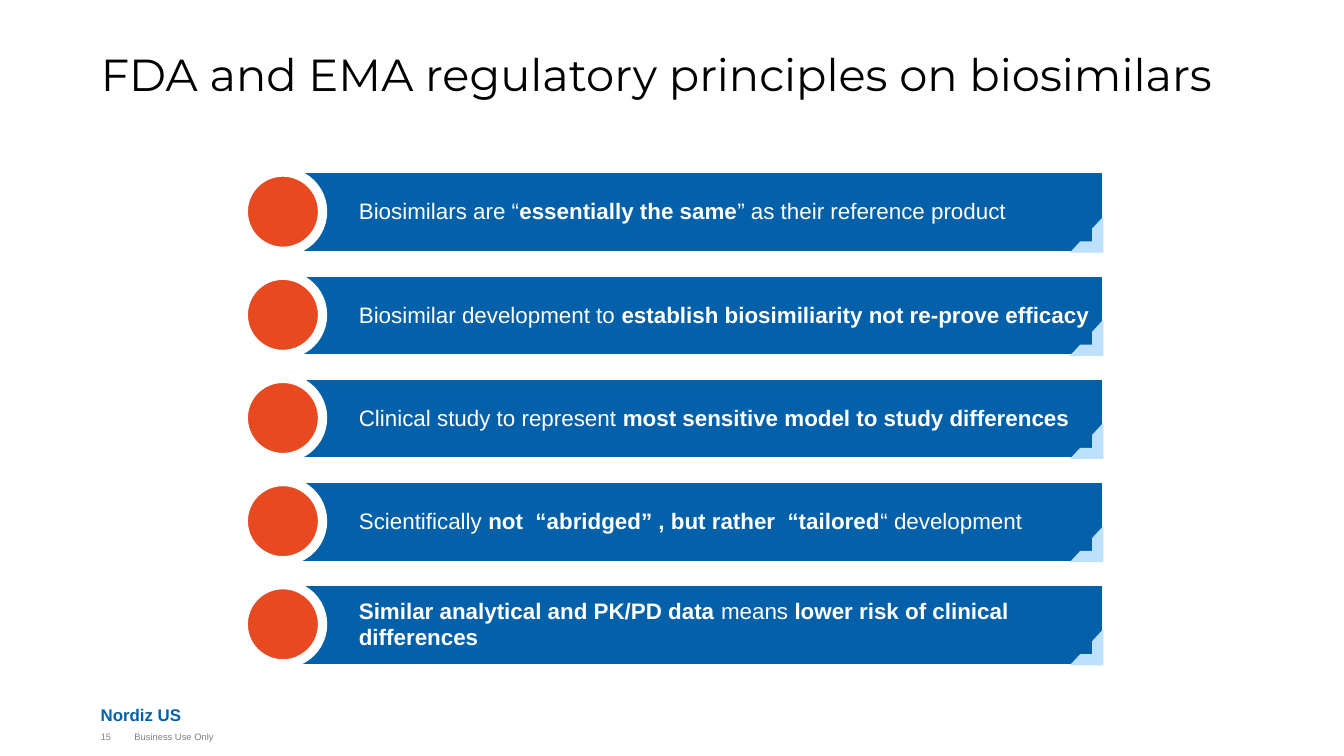
"""Build a slide listing five regulatory principles on biosimilars."""
from pptx import Presentation
from pptx import util as u
from pptx.dml.color import RGBColor
from pptx.enum import shapes, text

COLORS = {"blue": "0460A9", "orange": "E74A21", "sky": "BDE1FD",
          "white": "FFFFFF", "black": "000000", "gray": "7F7F7F"}
TITLE = "FDA and EMA regulatory principles on biosimilars"
PRINCIPLES = [
    [("Biosimilars are “", False), ("essentially the same", True),
     ("” as their reference product", False)],
    [("Biosimilar development to ", False),
     ("establish biosimiliarity not re-prove efficacy", True)],
    [("Clinical study to represent ", False),
     ("most sensitive model to study differences", True)],
    [("Scientifically ", False), ("not  “abridged” , but rather  “tailored", True),
     ("“ development", False)],
    [("Similar analytical and PK/PD data ", True), ("means ", False),
     ("lower risk of clinical differences", True)],
]
FOOTERS = [
    ("Nordiz US", (0.75, 5.2, 6.5, 0.19), 9, "blue", True, text.MSO_ANCHOR.BOTTOM),
    ("15", (0.75, 5.44, 0.25, 0.19), 5, "gray", False, text.MSO_ANCHOR.TOP),
    ("Business Use Only", (1, 5.44, 6.25, 0.19), 5, "gray", False, text.MSO_ANCHOR.TOP),
]
WIDTH = 10
HEIGHT = WIDTH * 9 / 16
MARGIN = 0.75
FIRST_ROW, LAST_ROW = 1.28, 4.35
BAR_LEFT, BAR_WIDTH, BAR_HEIGHT = 2.2, 6.01, 0.6
DOT = 0.59
CORNER_WIDTH, CORNER_HEIGHT = 0.25, 0.27


def color(name):
    return RGBColor.from_string(COLORS[name])


def style_font(font, size, name, bold=False, face="Arial"):
    font.size, font.name, font.bold = u.Pt(size), face, bold
    font.color.rgb = color(name)


def set_frame(frame, anchor, insets=(0, 0, 0, 0)):
    frame.word_wrap = True
    frame.auto_size = text.MSO_AUTO_SIZE.NONE
    frame.vertical_anchor = anchor
    (frame.margin_left, frame.margin_top,
     frame.margin_right, frame.margin_bottom) = map(u.Inches, insets)


def add_shape(page, kind, area, fill, line_width=0):
    shape = page.shapes.add_shape(kind, *map(u.Inches, area))
    shape.shadow.inherit = False
    shape.fill.solid()
    shape.fill.fore_color.rgb = color(fill)
    if line_width:
        shape.line.color.rgb = color("white")
        shape.line.width = u.Pt(line_width)
    else:
        shape.line.fill.background()
    return shape


def add_title(page):
    title = page.shapes.title
    title.left, title.top, title.width, title.height = map(
        u.Inches, (MARGIN, 0.38, WIDTH - 2 * MARGIN, 0.79))
    title.text_frame.text = TITLE
    set_frame(title.text_frame, text.MSO_ANCHOR.TOP)
    para = title.text_frame.paragraphs[0]
    para.alignment = text.PP_ALIGN.LEFT
    para.line_spacing = 0.95
    style_font(para.runs[0].font, 24, "black", face="Montserrat")


def add_footer(page, words, area, size, name, bold, anchor):
    box = page.shapes.add_textbox(*map(u.Inches, area))
    box.text_frame.text = words
    set_frame(box.text_frame, anchor)
    style_font(box.text_frame.paragraphs[0].runs[0].font, size, name, bold)


def add_principle(page, top, spans):
    bar = add_shape(page, shapes.MSO_SHAPE.RECTANGLE,
                    (BAR_LEFT, top, BAR_WIDTH, BAR_HEIGHT), "blue", 1.5)
    set_frame(bar.text_frame, text.MSO_ANCHOR.MIDDLE, (0.47, 0.04, 0.04, 0.04))
    para = bar.text_frame.paragraphs[0]
    para.alignment = text.PP_ALIGN.LEFT
    para.line_spacing = 0.95
    for words, bold in spans:
        span = para.add_run()
        span.text = words
        style_font(span.font, 12, "white", bold)
    add_shape(page, shapes.MSO_SHAPE.OVAL, (1.81, top, DOT, DOT), "orange", 5)


def add_corner(page, top):
    corner = add_shape(page, shapes.MSO_SHAPE.HALF_FRAME,
                       (BAR_LEFT + BAR_WIDTH - CORNER_WIDTH,
                        top + BAR_HEIGHT - CORNER_HEIGHT,
                        CORNER_WIDTH, CORNER_HEIGHT), "sky")
    corner.rotation = 180


def main():
    deck = Presentation()
    deck.slide_width, deck.slide_height = u.Inches(WIDTH), u.Inches(HEIGHT)
    page = deck.slides.add_slide(deck.slide_layouts.get_by_name("Title Only"))
    add_title(page)
    for footer in FOOTERS:
        add_footer(page, *footer)
    pitch = (LAST_ROW - FIRST_ROW) / (len(PRINCIPLES) - 1)
    for row, spans in enumerate(PRINCIPLES):
        top = FIRST_ROW + row * pitch
        add_principle(page, top, spans)
        add_corner(page, top)
    deck.save("out.pptx")


if __name__ == "__main__":
    main()
